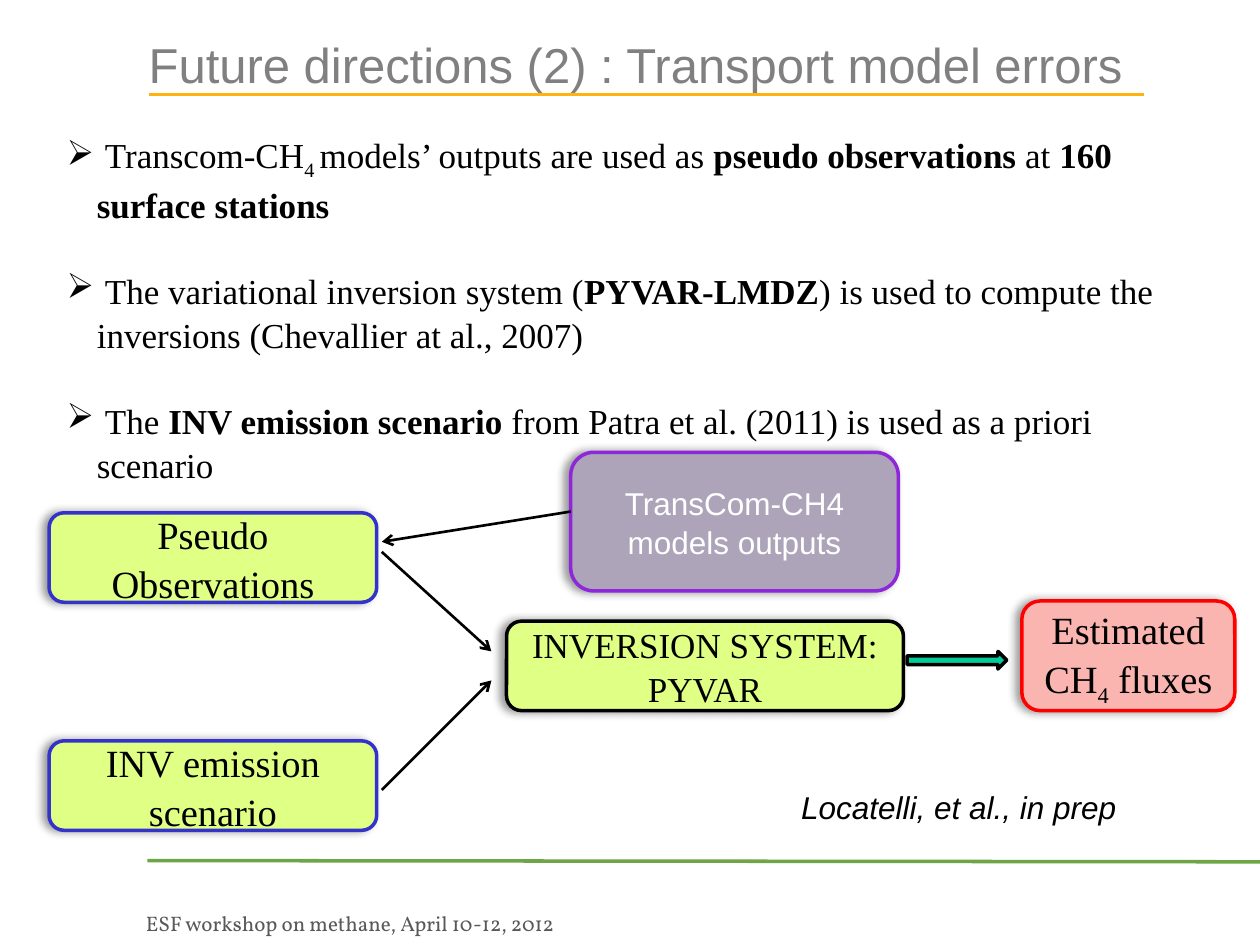
import pptx
import pptx.dml.color
import pptx.enum.shapes
import pptx.enum.text
import pptx.oxml
import pptx.oxml.ns
import pptx.util
from pptx.util import Inches

COLORS = {
    "black": "000000", "white": "FFFFFF", "title": "808080", "footer": "595959",
    "gold": "FFB310", "green": "6DA547", "lime": "E0FF85", "blue": "3333CC",
    "pink": "FAB5B0", "red": "FF0000", "mauve": "ADA4BA", "purple": "8D27D9",
    "teal": "00CC99",
}
SERIF = "Times New Roman"
SANS = "Arial"
NAMESPACE = pptx.oxml.ns.nsdecls("a")
SHAPES = pptx.enum.shapes.MSO_SHAPE
ANCHOR = pptx.enum.text.MSO_ANCHOR
ALIGN = pptx.enum.text.PP_ALIGN


def rgb(name):
    return pptx.dml.color.RGBColor.from_string(COLORS[name])


def element(xml):
    return pptx.oxml.parse_xml(xml.replace(">", f" {NAMESPACE}>", 1))


class SlideBuilder:
    line_spacing = 1.05

    def __init__(self, slide):
        self.slide = slide

    def add_runs(self, paragraph, runs, size, font=SERIF, color="black", italic=False):
        paragraph.line_spacing = self.line_spacing
        for text, style in runs:
            run = paragraph.add_run()
            run.text = text
            run.font.name = font
            run.font.size = pptx.util.Pt(size)
            run.font.color.rgb = rgb(color)
            run.font.bold = style == "bold"
            run.font.italic = italic
            if style == "subscript":
                run._r.get_or_add_rPr().set("baseline", "-25000")

    def title(self, text, left, top, width, height):
        shape = self.slide.shapes.title
        shape.left, shape.top = Inches(left), Inches(top)
        shape.width, shape.height = Inches(width), Inches(height)
        frame = shape.text_frame
        frame.vertical_anchor = ANCHOR.TOP
        frame.auto_size = pptx.enum.text.MSO_AUTO_SIZE.NONE
        frame.margin_top = Inches(0.08)
        frame.paragraphs[0].alignment = ALIGN.LEFT
        self.add_runs(frame.paragraphs[0], [(text, None)], 28, SANS, "title")

    def text(self, left, top, width, height, wrap=False):
        box = self.slide.shapes.add_textbox(
            Inches(left), Inches(top), Inches(width), Inches(height))
        box.text_frame.word_wrap = wrap
        return box.text_frame

    def label(self, text, bounds, size, font, color, italic=False):
        frame = self.text(*bounds)
        self.add_runs(frame.paragraphs[0], [(text, None)], size, font, color, italic)

    def bullets(self, items, bounds):
        frame = self.text(*bounds, wrap=True)
        for index, runs in enumerate(items):
            paragraph = frame.add_paragraph() if index else frame.paragraphs[0]
            if index:
                paragraph.space_before = pptx.util.Pt(24)
            properties = paragraph._p.get_or_add_pPr()
            properties.set("marL", str(Inches(0.24)))
            properties.set("indent", str(-Inches(0.24)))
            properties.append(element('<a:buChar char="➢"></a:buChar>'))
            self.add_runs(paragraph, runs, 20)

    def shape(self, kind, bounds, fill, line):
        shape = self.slide.shapes.add_shape(kind, *(Inches(value) for value in bounds))
        shape.shadow.inherit = False
        shape.fill.solid()
        shape.fill.fore_color.rgb = rgb(fill)
        shape.line.color.rgb = rgb(line)
        shape.line.width = pptx.util.Pt(2)
        return shape

    def box(self, lines, bounds, fill, line, size=22, font=SERIF, color="black"):
        shape = self.shape(SHAPES.ROUNDED_RECTANGLE, bounds, fill, line)
        effects = shape._element.spPr.find(pptx.oxml.ns.qn("a:effectLst"))
        effects.append(element(
            f'<a:outerShdw blurRad="{pptx.util.Pt(5)}" dist="{pptx.util.Pt(3)}" '
            'dir="10800000" rotWithShape="0"><a:srgbClr val="000000">'
            '<a:alpha val="40000"/></a:srgbClr></a:outerShdw>'))
        frame = shape.text_frame
        frame.word_wrap = True
        frame.vertical_anchor = ANCHOR.MIDDLE
        for index, runs in enumerate(lines):
            paragraph = frame.add_paragraph() if index else frame.paragraphs[0]
            paragraph.alignment = ALIGN.CENTER
            self.add_runs(paragraph, runs, size, font, color)

    def line(self, start, end, color="black", width=1.5, arrow=False):
        connector = self.slide.shapes.add_connector(
            pptx.enum.shapes.MSO_CONNECTOR.STRAIGHT,
            *(Inches(value) for value in start + end))
        connector.line.color.rgb = rgb(color)
        connector.line.width = pptx.util.Pt(width)
        properties = connector._element.spPr
        if arrow:
            properties.get_or_add_ln().append(
                element('<a:tailEnd type="arrow"></a:tailEnd>'))
        properties.append(element("<a:effectLst></a:effectLst>"))


def main():
    presentation = pptx.Presentation()
    presentation.slide_width = Inches(10)
    presentation.slide_height = Inches(7.5)
    builder = SlideBuilder(presentation.slides.add_slide(presentation.slide_layouts[5]))

    builder.line((1.17, 6.83), (10, 6.84), "green", 2)
    builder.label("ESF workshop on methane, April 10-12, 2012",
                  (1.06, 7.17, 3.53, 0.3), 12, "Vollkorn", "footer")
    builder.line((1.18, 0.75), (9.08, 0.75), "gold", 2.25)
    builder.title("Future directions (2) : Transport model errors", 1.08, 0.17, 8.27, 0.39)

    builder.bullets([
        [(" Transcom-CH", None), ("4 ", "subscript"),
         ("models’ outputs are used as ", None), ("pseudo observations ", "bold"),
         ("at ", None), ("160 surface stations", "bold")],
        [(" The variational inversion system (", None), ("PYVAR-LMDZ", "bold"),
         (") is used to compute the inversions (Chevallier at al., 2007)", None)],
        [(" The ", None), ("INV emission scenario ", "bold"),
         ("from Patra et al. (2011) is used as a priori scenario", None)],
    ], (0.43, 0.99, 9.29, 2.79))

    for text, top in (("Pseudo Observations", 4.07), ("INV emission scenario", 5.88)):
        builder.box([[(text, None)]], (0.39, top, 2.6, 0.71), "lime", "blue")
    builder.box([[("INVERSION SYSTEM:", None)], [("PYVAR", None)]],
                (4.02, 4.93, 3.15, 0.71), "lime", "black", 20)
    builder.box([[("Estimated CH", None), ("4", "subscript"), (" fluxes", None)]],
                (8.11, 4.77, 1.69, 0.87), "pink", "red")
    builder.shape(SHAPES.RIGHT_ARROW, (7.2, 5.17, 0.79, 0.14), "teal", "black")
    builder.label("Locatelli, et al., in prep", (6.26, 6.19, 2.79, 0.4),
                  18, SANS, "black", italic=True)
    builder.box([[("TransCom-CH4 models outputs", None)]], (4.53, 3.59, 2.6, 1.1),
                "mauve", "purple", 18, SANS, "white")

    for start, end in (((3.03, 4.38), (3.9, 5.17)),
                       ((3.03, 6.27), (3.9, 5.4)),
                       ((4.53, 4.06), (3.03, 4.3))):
        builder.line(start, end, arrow=True)

    presentation.save("out.pptx")


if __name__ == "__main__":
    main()
